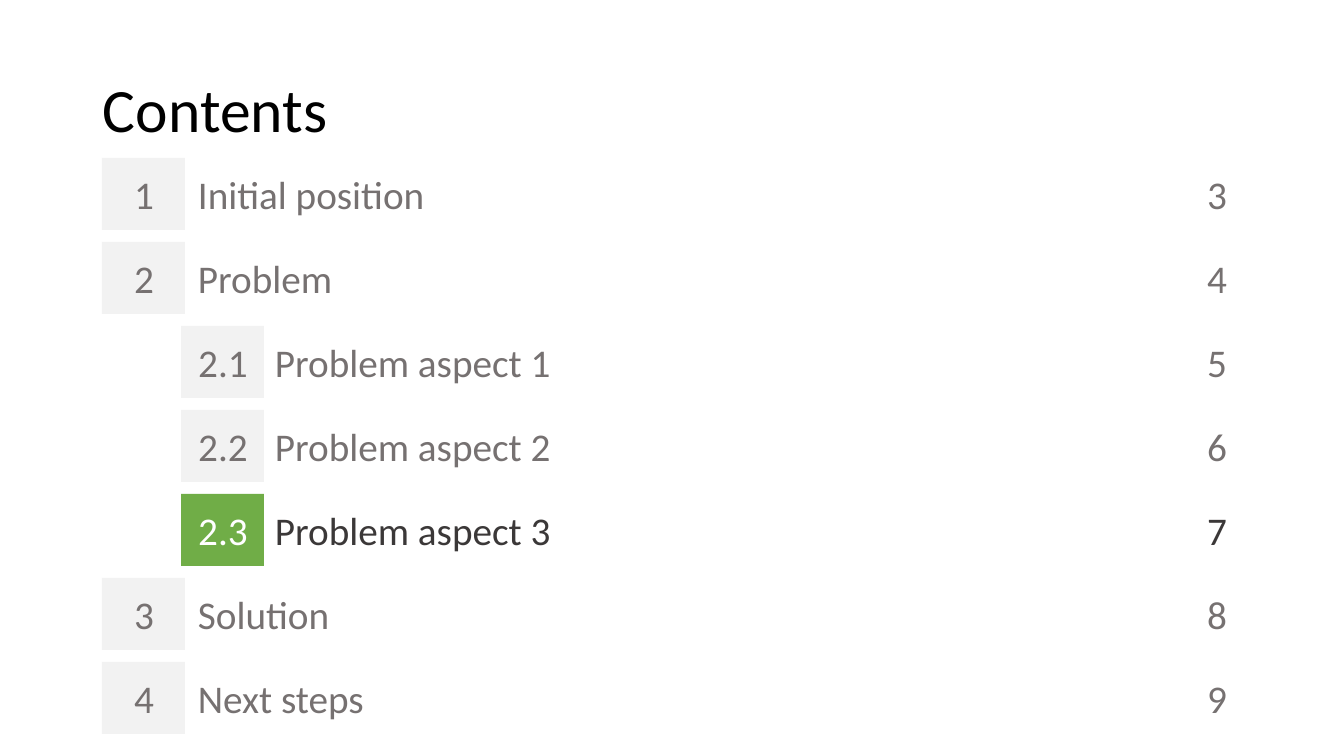
from dataclasses import dataclass

import pptx
import pptx.dml.color
import pptx.enum.shapes
import pptx.enum.text
import pptx.util

ALIGN = pptx.enum.text.PP_ALIGN
SLIDE_W, SLIDE_H = 1344, 756
EMU_PER_PX = 12192000 / SLIDE_W


@dataclass(frozen=True)
class Theme:
    font: str = "Calibri"
    title_size: int = 44
    entry_size: int = 28
    title: str = "000000"
    muted: str = "767171"
    active: str = "3B3838"
    chip: str = "F2F2F2"
    active_chip: str = "70AD47"
    on_active: str = "FFFFFF"


def emu(px):
    return pptx.util.Emu(round(px * EMU_PER_PX))


def rgb(value):
    return pptx.dml.color.RGBColor.from_string(value)


def assign(target, values):
    for name, value in values.items():
        setattr(target, name, value)


class ContentsSlide:
    def __init__(self, deck, theme):
        self.theme = theme
        self.slide = deck.slides.add_slide(deck.slide_layouts[6])

    def set_line(self, holder, words, color, size, align, insets, spacing=1.0):
        """Put one styled line into a shape; insets run left, top, right, bottom."""
        frame = holder.text_frame
        left, top, right, bottom = map(emu, insets)
        assign(frame, {
            "word_wrap": True,
            "vertical_anchor": pptx.enum.text.MSO_ANCHOR.MIDDLE,
            "margin_left": left,
            "margin_top": top,
            "margin_right": right,
            "margin_bottom": bottom,
        })
        line = frame.paragraphs[0]
        assign(line, {"alignment": align, "line_spacing": spacing})
        run = line.add_run()
        run.text = words
        assign(run.font, {"name": self.theme.font, "size": pptx.util.Pt(size)})
        run.font.color.rgb = rgb(color)

    def text(self, box, words, color, size, align=ALIGN.LEFT,
             insets=(10, 5, 10, 5), spacing=1.0):
        holder = self.slide.shapes.add_textbox(*map(emu, box))
        self.set_line(holder, words, color, size, align, insets, spacing)

    def chip(self, box, number, fill, color):
        square = self.slide.shapes.add_shape(
            pptx.enum.shapes.MSO_SHAPE.RECTANGLE, *map(emu, box))
        square.shadow.inherit = False
        square.fill.solid()
        square.fill.fore_color.rgb = rgb(fill)
        square.line.fill.background()
        self.set_line(square, number, color, self.theme.entry_size,
                      ALIGN.CENTER, (5, 5, 4, 5))

    def entry(self, top, number, topic, page, active):
        """Draw one contents row; a dotted number is indented as a subtopic."""
        theme = self.theme
        chip_left, topic_left = (181, 270) if "." in number else (102, 193)
        ink = theme.active if active else theme.muted
        fill, number_ink = ((theme.active_chip, theme.on_active) if active
                            else (theme.chip, theme.muted))
        self.chip((chip_left, top, 83, ROW_H), number, fill, number_ink)
        self.text((topic_left, top, TOPIC_RIGHT - topic_left, ROW_H), topic,
                  ink, theme.entry_size, insets=(5, 5, 10, 5))
        self.text((1182, top, 70, ROW_H), page, ink, theme.entry_size,
                  ALIGN.CENTER)


FIRST_ROW, ROW_PITCH, ROW_H = 158, 84, 72
TOPIC_RIGHT = 1168
FIRST_PAGE = 3
ACTIVE_NUMBER = "2.3"
ENTRIES = [
    ("1", "Initial position"),
    ("2", "Problem"),
    ("2.1", "Problem aspect 1"),
    ("2.2", "Problem aspect 2"),
    ("2.3", "Problem aspect 3"),
    ("3", "Solution"),
    ("4", "Next steps"),
]


def main():
    deck = pptx.Presentation()
    assign(deck, {"slide_width": emu(SLIDE_W), "slide_height": emu(SLIDE_H)})
    theme = Theme()
    contents = ContentsSlide(deck, theme)
    contents.text((93, 40, 1159, 146), "Contents", theme.title,
                  theme.title_size, spacing=0.9)
    for row, (number, topic) in enumerate(ENTRIES):
        contents.entry(FIRST_ROW + row * ROW_PITCH, number, topic,
                       str(FIRST_PAGE + row), number == ACTIVE_NUMBER)
    deck.save("out.pptx")


if __name__ == "__main__":
    main()
